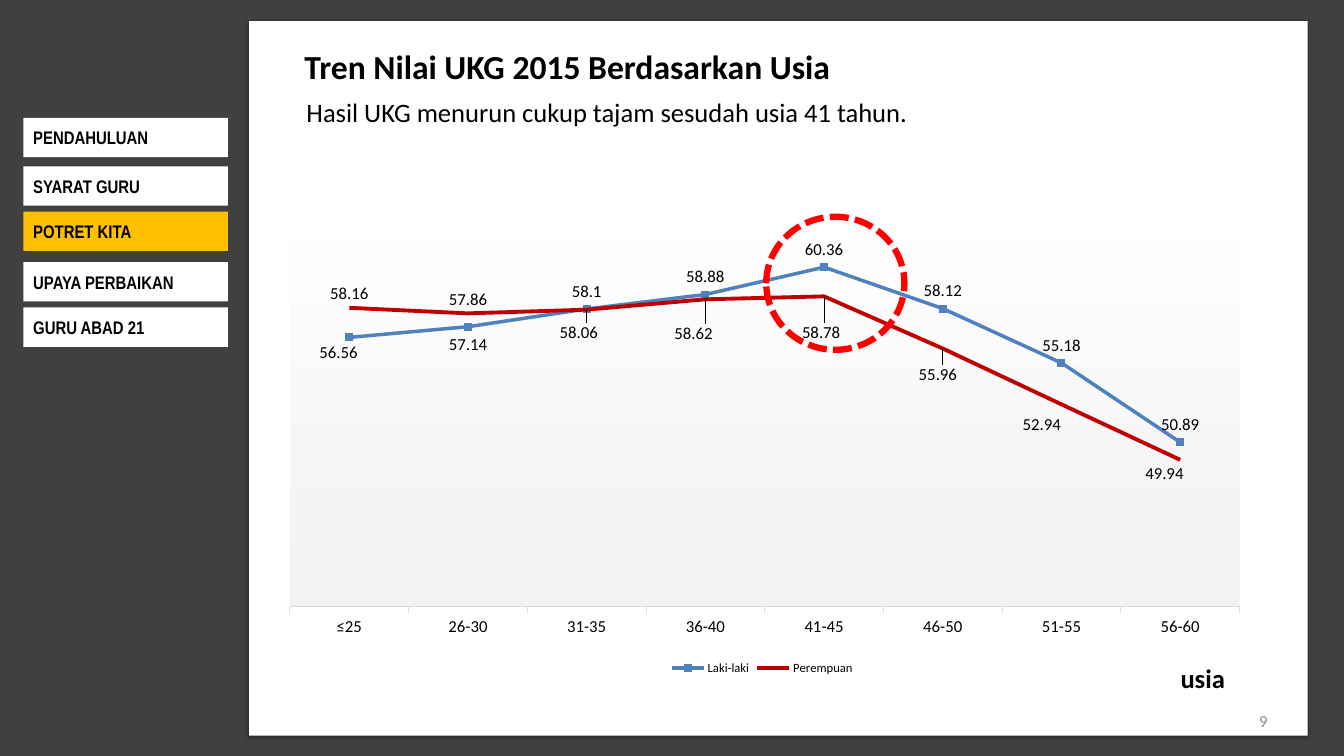
from lxml import etree
from pptx import Presentation
from pptx.chart.data import CategoryChartData
from pptx.dml.color import RGBColor
from pptx.enum.chart import XL_CHART_TYPE as ChartType, XL_LABEL_POSITION as LabelPos
from pptx.enum.chart import XL_LEGEND_POSITION as LegendPos, XL_MARKER_STYLE as Marker
from pptx.enum.chart import XL_TICK_MARK as Tick
from pptx.enum.dml import MSO_LINE
from pptx.enum.shapes import MSO_SHAPE as Preset
from pptx.enum.text import MSO_ANCHOR as Anchor, PP_ALIGN as Align
from pptx.oxml import parse_xml
from pptx.util import Inches, Pt

NS = ('xmlns:a="http://schemas.openxmlformats.org/drawingml/2006/main" '
      'xmlns:c="http://schemas.openxmlformats.org/drawingml/2006/chart"')

prs = Presentation()
prs.slide_width, prs.slide_height = Inches(13.33), Inches(7.5)
PERCENT = [prs.slide_width / 100, prs.slide_height / 100] * 2
slide = prs.slides.add_slide(prs.slide_layouts[6])
color = RGBColor.from_string


def add_box(frame, preset=None, fill=None, text="", size=13, font="Calibri", ink="000000",
            bold=False, align=Align.LEFT, anchor=Anchor.TOP, inset=(0.1, 0.05), wrap=True):
    """Add a shape, or a text box without a preset; frame is in percent of the slide."""
    place = [round(share * unit) for share, unit in zip(frame, PERCENT)]
    if preset is None:
        box = slide.shapes.add_textbox(*place)
    else:
        box = slide.shapes.add_shape(preset, *place)
        box.shadow.inherit = False
        box.line.fill.background()
        if fill:
            box.fill.solid()
            box.fill.fore_color.rgb = color(fill)
        else:
            box.fill.background()
    if text:
        frame_text = box.text_frame
        frame_text.word_wrap = wrap
        frame_text.vertical_anchor = anchor
        frame_text.margin_left = frame_text.margin_right = Inches(inset[0])
        frame_text.margin_top = frame_text.margin_bottom = Inches(inset[1])
        paragraph = frame_text.paragraphs[0]
        paragraph.alignment = align
        run = paragraph.add_run()
        run.text = text
        run.font.size, run.font.name, run.font.bold = Pt(size), font, bold
        run.font.color.rgb = color(ink)
    return box


# Backdrop and page
add_box((0, 0, 100, 100), Preset.RECTANGLE, "404040")
page = add_box((18.53, 2.8, 78.77, 94.53), Preset.RECTANGLE, "FFFFFF")
page_effects = page._element.spPr.find("{*}effectLst")
page_effects.append(parse_xml(
    f'<a:outerShdw {NS} blurRad="{Pt(3.1)}" dist="{Pt(1.6)}" dir="5400000" rotWithShape="0">'
    '<a:srgbClr val="000000"><a:alpha val="38000"/></a:srgbClr></a:outerShdw>'))
add_box((71.72, 92.67, 23.33, 5.33), text="9", size=12, ink="8C8C8C",
        align=Align.RIGHT, anchor=Anchor.MIDDLE)
add_box((21.68, 5.2, 48.01, 7.2), text="Tren Nilai UKG 2015 Berdasarkan Usia", size=24,
        bold=True, inset=(0.13, 0.07), wrap=False)

# Scores by age
scores = CategoryChartData()
scores.categories = ["≤25", "26-30", "31-35", "36-40", "41-45", "46-50", "51-55", "56-60"]
scores.add_series("Laki-laki", [56.56, 57.14, 58.1, 58.88, 60.36, 58.12, 55.18, 50.89])
scores.add_series("Perempuan", [58.16, 57.86, 58.06, 58.62, 58.78, 55.96, 52.94, 49.94])
chart_place = [round(share * unit) for share, unit in zip((20.11, 20.67, 73.22, 69.2), PERCENT)]
chart = slide.shapes.add_chart(ChartType.LINE_MARKERS, *chart_place, scores).chart
chart.has_title = False
chart.font.size, chart.font.name = Pt(10), "Calibri"
chart.font.color.rgb = color("000000")
chart.has_legend = True
chart.legend.position = LegendPos.BOTTOM
chart.legend.include_in_layout = False
chart.legend.font.size, chart.legend.font.name = Pt(9), "Calibri"
chart.legend.font.color.rgb = color("000000")

ages = chart.category_axis
ages.has_major_gridlines = False
ages.major_tick_mark = Tick.OUTSIDE
ages.tick_labels.font.size, ages.tick_labels.font.name = Pt(12), "Calibri"
ages.tick_labels.font.color.rgb = color("000000")
ages.format.line.color.rgb = color("D9D9D9")
ages.format.line.width = Pt(0.75)
points_axis = chart.value_axis
points_axis.visible = False
points_axis.has_major_gridlines = False
points_axis.minimum_scale, points_axis.maximum_scale, points_axis.major_unit = 42, 65, 2

# Labels moved below the line: point -> shift in percent of the chart
men_shifts = {0: (-1.1, 6.3), 1: (0, 6.7)}
women_shifts = {2: (-0.8, 7), 3: (-1.2, 9.2), 4: (-0.3, 9.6), 5: (-0.5, 7.7),
                6: (-2, 6.5), 7: (-1.6, 5.4)}
looks = [("4F81BD", 2.5, Marker.SQUARE, men_shifts), ("C00000", 2.75, Marker.NONE, women_shifts)]
plot = chart.plots[0]
plot.vary_by_categories = False
for series, (hue, width, marker, shifts) in zip(plot.series, looks):
    series.smooth = False
    series.format.line.color.rgb = color(hue)
    series.format.line.width = Pt(width)
    series.marker.style = marker
    if marker != Marker.NONE:
        series.marker.size = 5
        series.marker.format.fill.solid()
        series.marker.format.fill.fore_color.rgb = color(hue)
        series.marker.format.line.color.rgb = color(hue)
    labels = series.data_labels
    labels.show_value = True
    labels.position = LabelPos.ABOVE
    labels.font.size, labels.font.name = Pt(12), "Calibri"
    for index in shifts:
        label = series.points[index].data_label
        label.position = LabelPos.ABOVE
        label.font.size, label.font.name = Pt(12), "Calibri"
    for label_xml, (dx, dy) in zip(series._element.xpath("c:dLbls/c:dLbl"), shifts.values()):
        label_xml.insert(1, parse_xml(
            f'<c:layout {NS}><c:manualLayout><c:x val="{dx / 100}"/><c:y val="{dy / 100}"/>'
            '</c:manualLayout></c:layout>'))

# Plot position, plot gradient and chart background
plot_area = chart.element.xpath("c:chart/c:plotArea")[0]
for layout in plot_area.xpath("c:layout"):
    plot_area.remove(layout)
plot_layout = parse_xml(
    f'<c:layout {NS}><c:manualLayout><c:layoutTarget val="inner"/>'
    '<c:xMode val="edge"/><c:yMode val="edge"/></c:manualLayout></c:layout>')
for side, percent in zip("xywh", (2, 4.8, 96.5, 81.3)):
    etree.SubElement(plot_layout[0], plot_layout.tag.replace("layout", side),
                     val=str(percent / 100))
plot_area.insert(0, plot_layout)
plot_area.append(parse_xml(
    f'<c:spPr {NS}><a:gradFill><a:gsLst><a:gs pos="0"><a:srgbClr val="FFFFFF"/></a:gs>'
    '<a:gs pos="100000"><a:srgbClr val="F2F2F2"/></a:gs></a:gsLst>'
    '<a:lin ang="5400000" scaled="0"/></a:gradFill><a:ln><a:noFill/></a:ln></c:spPr>'))
chart.element.xpath("c:chart")[0].addnext(parse_xml(
    f'<c:spPr {NS}><a:solidFill><a:srgbClr val="FFFFFF"/></a:solidFill>'
    '<a:ln><a:noFill/></a:ln></c:spPr>'))

# Peak marker and captions
peak = add_box((57.01, 28.67, 10.28, 17.6), Preset.OVAL)
peak.line.color.rgb = color("FF0000")
peak.line.width = Pt(4.5)
peak.line.dash_style = MSO_LINE.SQUARE_DOT
add_box((83.12, 86.67, 9.15, 6.27), text="usia", size=19, bold=True,
        align=Align.RIGHT, inset=(0.15, 0.07))
add_box((21.68, 11.73, 57.01, 6.27), text="Hasil UKG menurun cukup tajam sesudah usia 41 tahun.",
        size=19, inset=(0.15, 0.07))

# Chapter menu
current = "POTRET KITA"
chapters = [("PENDAHULUAN", 15.6), ("SYARAT GURU", 22), (current, 28),
            ("UPAYA PERBAIKAN", 34.67), ("GURU ABAD 21", 40.67)]
for chapter, top in chapters:
    add_box((1.73, top, 15.23, 5.2), Preset.RECTANGLE,
            "FFC000" if chapter == current else "FFFFFF", chapter,
            font="Arial Narrow", bold=True, anchor=Anchor.MIDDLE)

prs.save("out.pptx")
